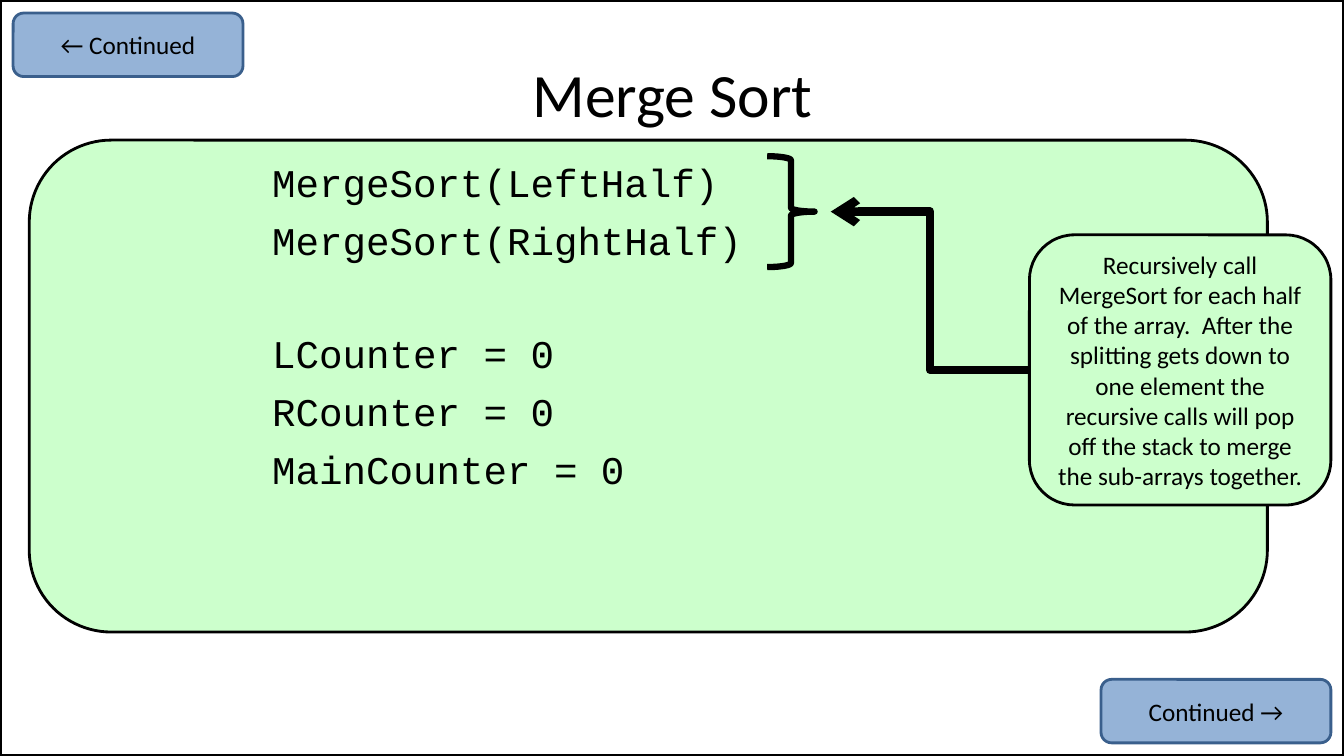
from lxml import etree
from pptx import Presentation
from pptx.dml.color import RGBColor
from pptx.enum.shapes import MSO_CONNECTOR, MSO_SHAPE
from pptx.enum.text import MSO_ANCHOR, PP_ALIGN
from pptx.oxml.ns import qn
from pptx.util import Inches, Pt

RECT = MSO_SHAPE.RECTANGLE
ROUND = MSO_SHAPE.ROUNDED_RECTANGLE
BRACE = MSO_SHAPE.RIGHT_BRACE
ELBOW = MSO_CONNECTOR.ELBOW
MIDDLE = MSO_ANCHOR.MIDDLE
TOP = MSO_ANCHOR.TOP
CENTER = PP_ALIGN.CENTER
LEFT = PP_ALIGN.LEFT

WIDTH, HEIGHT = 13.33, 7.5
BLACK, GREEN, BLUE, NAVY = "000000", "CCFFCC", "95B3D7", "3A5F8C"
GAP = 7.8  # points between code lines
ROW = 39.5  # points from one code line to the next
CODE = [
    ["MergeSort(LeftHalf)", "MergeSort(RightHalf)"],
    ["LCounter = 0", "RCounter = 0", "MainCounter = 0"],
]
NOTE = (
    "Recursively call MergeSort for each half of the array.  After the "
    "splitting gets down to one element the recursive calls will pop off "
    "the stack to merge the sub-arrays together."
)


def color(code):
    return RGBColor.from_string(code)


def inches(box):
    return [Inches(n) for n in box]


def write(para, text, size=18, font="Calibri", align=CENTER, before=0):
    para.alignment = align
    para.space_before = Pt(before)
    run = para.add_run()
    run.text = text
    run.font.size = Pt(size)
    run.font.name = font
    run.font.color.rgb = color(BLACK)


def draw(slide, kind, box, fill=None, line=BLACK, width=2, text=None):
    shape = slide.shapes.add_shape(kind, *inches(box))
    shape.shadow.inherit = False
    if fill:
        shape.fill.solid()
        shape.fill.fore_color.rgb = color(fill)
    else:
        shape.fill.background()
    shape.line.color.rgb = color(line)
    shape.line.width = Pt(width)
    if text:
        frame = shape.text_frame
        frame.word_wrap = True
        frame.vertical_anchor = MIDDLE
        write(frame.paragraphs[0], text)
    return shape


def add_title(slide, box, text):
    title = slide.shapes.title
    title.left, title.top, title.width, title.height = inches(box)
    title.text_frame.vertical_anchor = MIDDLE
    write(title.text_frame.paragraphs[0], text, size=44)


def add_code(slide, box, groups):
    """Write groups of code lines, one row apart."""
    frame = slide.shapes.add_textbox(*inches(box)).text_frame
    frame.word_wrap = True
    frame.vertical_anchor = TOP
    frame.margin_left = Inches(2.03)
    frame.margin_top = Inches(0.02)
    para = frame.paragraphs[0]
    for g, group in enumerate(groups):
        for i, text in enumerate(group):
            if g or i:
                para = frame.add_paragraph()
            before = GAP + ROW if g and not i else GAP
            write(para, text, size=28, font="Courier New",
                  align=LEFT, before=before)


def add_arrow(slide, source, end):
    """Lead from the left side of source to the point end."""
    start = source.left, source.top + source.height // 2
    arrow = slide.shapes.add_connector(ELBOW, *start, *inches(end))
    arrow.begin_connect(source, 1)
    arrow.line.color.rgb = color(BLACK)
    arrow.line.width = Pt(6)
    props = arrow.line._get_or_add_ln()
    etree.SubElement(props, qn("a:tailEnd"), type="arrow")
    etree.SubElement(arrow._element.spPr, qn("a:effectLst"))


def add_panel(slide, box):
    """Show the code with a brace and a note that explains it."""
    x, y, w, h = box
    draw(slide, ROUND, box, fill=GREEN)
    add_code(slide, (x + 0.38, y + 0.16, 12, 4.95), CODE)
    note = draw(slide, ROUND, (x + 9.92, y + 0.94, 2.99, 2.68),
                fill=GREEN, text=NOTE)
    add_arrow(slide, note, (x + 7.95, y + 0.71))
    draw(slide, BRACE, (x + 7.32, y + 0.16, 0.47, 1.1), width=4.5)


def add_links(slide, box):
    """Put a button in the top left and bottom right corner."""
    x, y, w, h = box
    wide, high, edge = 2.28, 0.63, 0.13
    spots = [
        (x + w - edge - wide, y + h - edge - high, "Continued →"),
        (x + edge, y + edge, "← Continued"),
    ]
    for left, top, text in spots:
        draw(slide, ROUND, (left, top, wide, high),
             fill=BLUE, line=NAVY, text=text)


def main():
    deck = Presentation()
    deck.slide_width, deck.slide_height = inches((WIDTH, HEIGHT))
    slide = deck.slides.add_slide(deck.slide_layouts[5])
    page = (0, 0, WIDTH, HEIGHT)
    draw(slide, RECT, page, width=3)
    add_title(slide, (0.67, 0.3, 12, 1.25), "Merge Sort")
    add_panel(slide, (0.29, 1.39, 12.28, 4.88))
    add_links(slide, page)
    deck.save("out.pptx")


if __name__ == "__main__":
    main()
